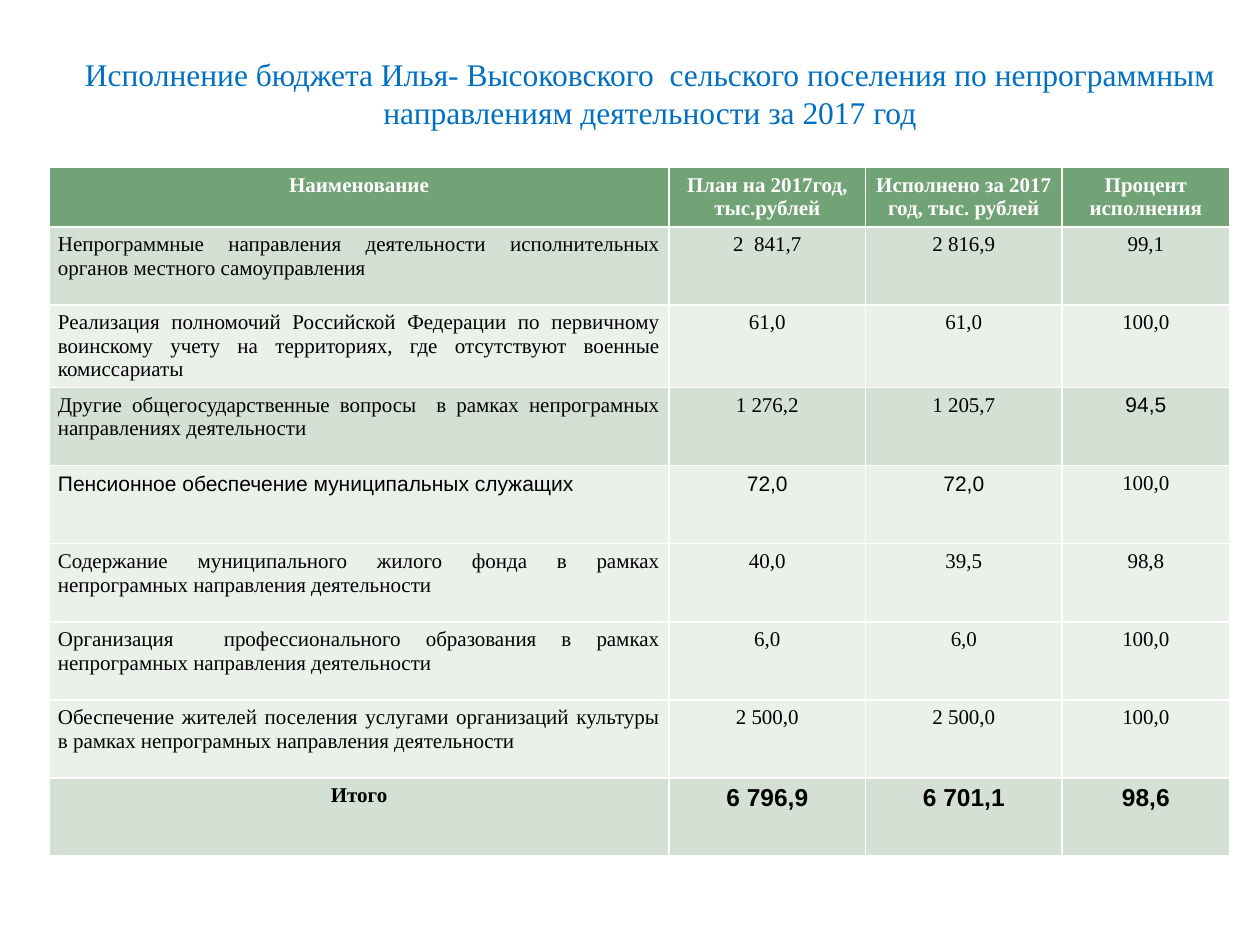
"""Build a slide with a table of non-programme budget spending for 2017."""
from pptx import Presentation
from pptx.dml.color import RGBColor
from pptx.enum.text import MSO_ANCHOR, MSO_AUTO_SIZE, PP_ALIGN
from pptx.util import Inches, Pt

CENTER, JUSTIFY = PP_ALIGN.CENTER, PP_ALIGN.JUSTIFY
MIDDLE, NO_FIT = MSO_ANCHOR.MIDDLE, MSO_AUTO_SIZE.NONE
SERIF, SANS = "Times New Roman", "Arial"
COLORS = {"title": "0070C0", "head": "72A376", "dark": "D5E0D5",
          "light": "EBF0EB", "white": "FFFFFF", "black": "000000"}
WIDTHS = [4.92, 1.56, 1.56, 1.33]
HEAD = ["Наименование", "План на 2017год,\nтыс.рублей",
        "Исполнено за 2017 год, тыс. рублей", "Процент исполнения"]
BODY = [
    ["Непрограммные направления деятельности исполнительных органов местного самоуправления",
     "2  841,7", "2 816,9", "99,1"],
    ["Реализация полномочий Российской Федерации по первичному воинскому учету "
     "на территориях, где отсутствуют военные комиссариаты", "61,0", "61,0", "100,0"],
    ["Другие общегосударственные вопросы  в рамках непрограмных направлениях деятельности",
     "1 276,2", "1 205,7", "94,5"],
    ["Пенсионное обеспечение муниципальных служащих", "72,0", "72,0", "100,0"],
    ["Содержание муниципального жилого фонда в рамках непрограмных направления деятельности",
     "40,0", "39,5", "98,8"],
    ["Организация  профессионального образования в рамках непрограмных направления деятельности",
     "6,0", "6,0", "100,0"],
    ["Обеспечение жителей поселения услугами организаций культуры "
     "в рамках непрограмных направления деятельности", "2 500,0", "2 500,0", "100,0"],
]
TOTAL = ["Итого", "6 796,9", "6 701,1", "98,6"]
ROWS = [HEAD, *BODY, TOTAL]
LAST = len(ROWS) - 1
FILLS = ["head", "dark", "light", "dark"] + ["light"] * 4 + ["dark"]
SANS_CELLS = {(3, 3), (4, 0), (4, 1), (4, 2), (LAST, 1), (LAST, 2), (LAST, 3)}


def write(frame, text, size=12, font=SERIF, color="black", bold=False, align=CENTER):
    frame.text = text
    for para in frame.paragraphs:
        para.alignment = align
        for run in para.runs:
            run.font.size = Pt(size)
            run.font.name = font
            run.font.bold = bold
            run.font.color.rgb = RGBColor.from_string(COLORS[color])


deck = Presentation()
deck.slide_width, deck.slide_height = Inches(10), Inches(7.5)
slide = deck.slides.add_slide(deck.slide_layouts[5])

title = slide.shapes.title
title.left, title.top = Inches(0.55), Inches(0.39)
title.width, title.height = Inches(9.22), Inches(0.7)
frame = title.text_frame
frame.word_wrap = True
frame.auto_size = NO_FIT
frame.vertical_anchor = MIDDLE
write(frame, "Исполнение бюджета Илья- Высоковского  сельского поселения "
      "по непрограммным направлениям деятельности за 2017 год", size=18, color="title")

table = slide.shapes.add_table(len(ROWS), len(WIDTHS), Inches(0.39), Inches(1.33),
                               Inches(sum(WIDTHS)), Inches(5.36)).table
for column, width in zip(table.columns, WIDTHS):
    column.width = Inches(width)

for r, values in enumerate(ROWS):
    table.rows[r].height = Inches(0.62 if r else 0.4)
    for c, value in enumerate(values):
        cell = table.cell(r, c)
        cell.margin_left = cell.margin_right = Inches(0.07)
        cell.fill.solid()
        cell.fill.fore_color.rgb = RGBColor.from_string(COLORS[FILLS[r]])
        write(cell.text_frame, value,
              size=14 if r == LAST and c else 12,
              font=SANS if (r, c) in SANS_CELLS else SERIF,
              color="black" if r else "white",
              bold=r in (0, LAST),
              align=JUSTIFY if c == 0 and 0 < r < LAST else CENTER)

deck.save("out.pptx")
